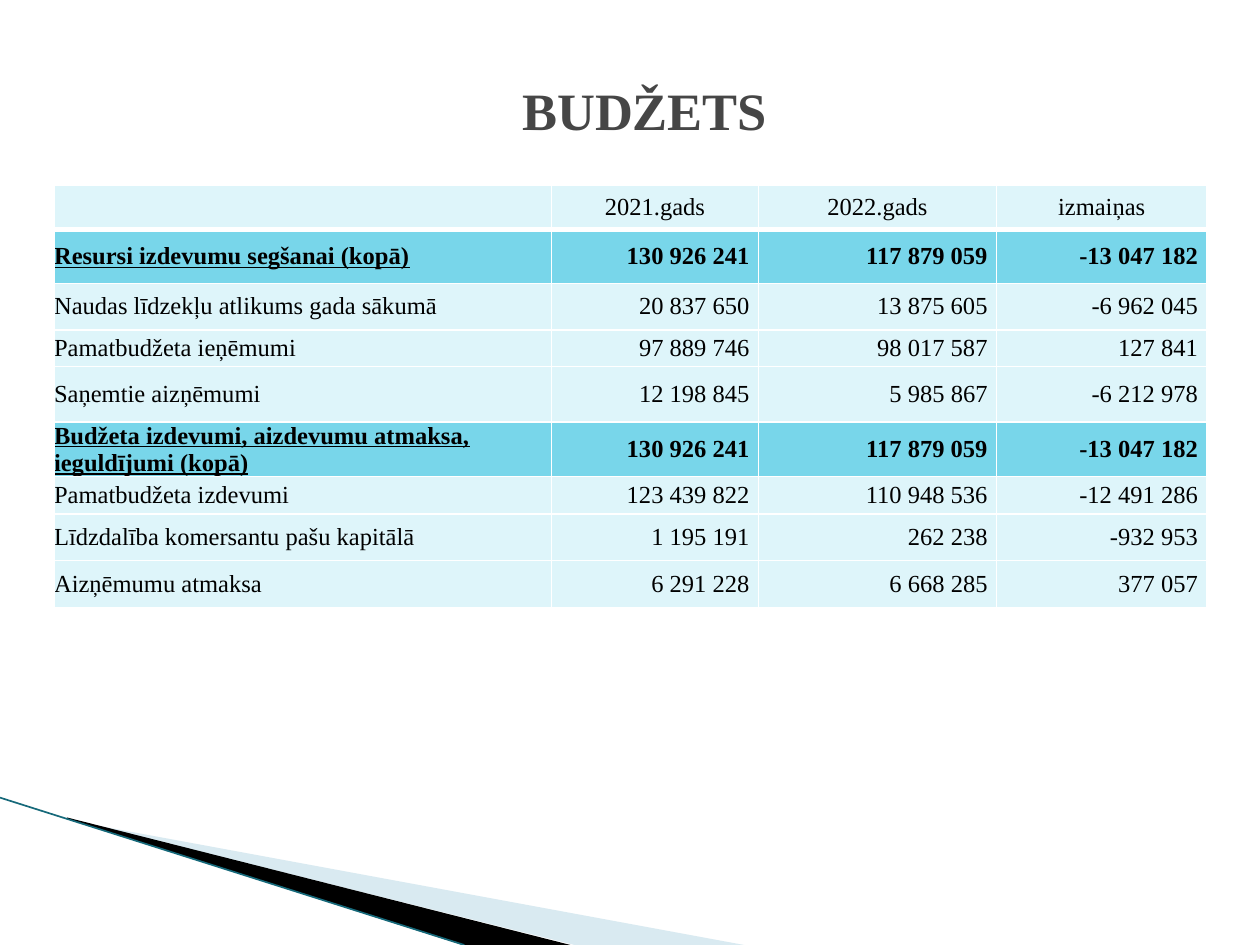
from dataclasses import dataclass
from typing import Any

from lxml.etree import SubElement as Sub
from pptx import Presentation
from pptx.dml.color import RGBColor as RGB
from pptx.enum.shapes import MSO_CONNECTOR as Link
from pptx.enum.text import MSO_ANCHOR as Anchor, PP_ALIGN as Align
from pptx.oxml.ns import qn
from pptx.util import Cm, Pt

FONT = "Times New Roman"
WHITE = RGB(0xFF, 0xFF, 0xFF)
BLACK = RGB(0, 0, 0)
GRAY = RGB(0x46, 0x46, 0x46)
PALE = RGB(0xDE, 0xF5, 0xFA)
AQUA = RGB(0x78, 0xD6, 0xEA)
MIST = RGB(0xA0, 0xCB, 0xDC)
TEAL = RGB(0x16, 0x69, 0x7A)

HEADS = ("", "2021.gads", "2022.gads", "izmaiņas")
COLS = (10.03, 4.17, 4.8, 4.24)
TOP = 0.89


@dataclass
class Row:
    name: str
    nums: tuple[str, str, str]
    high: float
    total: bool = False


@dataclass
class Wedge:
    points: list[tuple[float, float]]
    color: RGB
    alpha: int = 100


ROWS = [
    Row("Resursi izdevumu segšanai (kopā)",
        ("130 926 241", "117 879 059", "-13 047 182"), 1.09, True),
    Row("Naudas līdzekļu atlikums gada sākumā",
        ("20 837 650", "13 875 605", "-6 962 045"), 0.94),
    Row("Pamatbudžeta ieņēmumi",
        ("97 889 746", "98 017 587", "127 841"), 0.74),
    Row("Saņemtie aizņēmumi",
        ("12 198 845", "5 985 867", "-6 212 978"), 1.12),
    Row("Budžeta izdevumi, aizdevumu atmaksa, ieguldījumi (kopā)",
        ("130 926 241", "117 879 059", "-13 047 182"), 1.09, True),
    Row("Pamatbudžeta izdevumi",
        ("123 439 822", "110 948 536", "-12 491 286"), 0.76),
    Row("Līdzdalība komersantu pašu kapitālā",
        ("1 195 191", "262 238", "-932 953"), 0.94),
    Row("Aizņēmumu atmaksa",
        ("6 291 228", "6 668 285", "377 057"), 0.94),
]

WEDGES = [
    Wedge([(1.4, 16.54), (15.0, 19.05), (11.58, 19.05), (1.4, 16.51)], MIST, 40),
    Wedge([(1.35, 16.48), (11.5, 19.05), (9.33, 19.05), (1.37, 16.51)], BLACK),
]


def draw_wedge(slide: Any, wedge: Wedge) -> None:
    first, *rest = [(Cm(x), Cm(y)) for x, y in wedge.points]
    pen = slide.shapes.build_freeform(*first)
    pen.add_line_segments(rest)
    shape = pen.convert_to_shape()
    shape.shadow.inherit = False
    shape.line.fill.background()
    shape.fill.solid()
    shape.fill.fore_color.rgb = wedge.color
    if wedge.alpha < 100:
        tint = shape.fill._xPr.find(".//" + qn("a:srgbClr"))
        Sub(tint, qn("a:alpha"), val=str(wedge.alpha * 1000))


def draw_edge(slide: Any) -> None:
    edge = slide.shapes.add_connector(
        Link.STRAIGHT, Cm(0), Cm(16.08), Cm(9.36), Cm(19.05))
    edge.line.color.rgb = TEAL
    edge.line.width = Pt(0.95)
    Sub(edge._element.spPr, qn("a:effectLst"))


def set_text(para: Any, text: str, size: int, color: RGB, align: Align,
             bold: bool = False, under: bool = False) -> None:
    para.text = text
    para.alignment = align
    font = para.font
    font.name, font.size = FONT, Pt(size)
    font.bold, font.underline = bold, under
    font.color.rgb = color


def set_edges(cell: Any, top: int, base: int) -> None:
    props = cell._tc.get_or_add_tcPr()
    for side, width in zip("LRTB", (1, 1, top, base)):
        line = Sub(props, qn(f"a:ln{side}"), w=str(Pt(width)))
        Sub(Sub(line, qn("a:solidFill")), qn("a:srgbClr"), val=str(WHITE))


def fill_cell(cell: Any, text: str, align: Align, color: RGB, pad: float = 0,
              top: int = 1, base: int = 1, bold: bool = False,
              under: bool = False) -> None:
    set_edges(cell, top, base)
    cell.fill.solid()
    cell.fill.fore_color.rgb = color
    cell.vertical_anchor = Anchor.MIDDLE
    cell.margin_left = cell.margin_right = Cm(pad)
    cell.margin_top = cell.margin_bottom = Cm(0)
    set_text(cell.text_frame.paragraphs[0], text, 14, BLACK, align, bold, under)


def draw_table(slide: Any) -> None:
    highs = [TOP] + [row.high for row in ROWS]
    table = slide.shapes.add_table(
        len(highs), len(COLS), Cm(1.09), Cm(3.73),
        Cm(sum(COLS)), Cm(sum(highs))).table
    table.first_row = table.horz_banding = False
    for col, wide in zip(table.columns, COLS):
        col.width = Cm(wide)
    for line, high in zip(table.rows, highs):
        line.height = Cm(high)
    for c, head in enumerate(HEADS):
        fill_cell(table.cell(0, c), head, Align.CENTER, PALE, base=3)
    for r, row in enumerate(ROWS, 1):
        color = AQUA if row.total else PALE
        top = 3 if r == 1 else 1
        fill_cell(table.cell(r, 0), row.name, Align.LEFT, color, top=top,
                  bold=row.total, under=row.total)
        for c, num in enumerate(row.nums, 1):
            fill_cell(table.cell(r, c), num, Align.RIGHT, color, 0.18, top,
                      bold=row.total)


def draw_title(slide: Any) -> None:
    frame = slide.shapes.add_textbox(
        Cm(1.7), Cm(1.12), Cm(22.86), Cm(2.16)).text_frame
    frame.word_wrap = True
    frame.vertical_anchor = Anchor.MIDDLE
    set_text(frame.paragraphs[0], "BUDŽETS ", 30, GRAY, Align.CENTER, True)


def main() -> None:
    deck = Presentation()
    deck.slide_width, deck.slide_height = Cm(25.4), Cm(19.05)
    slide = deck.slides.add_slide(deck.slide_layouts[6])
    for wedge in WEDGES:
        draw_wedge(slide, wedge)
    draw_edge(slide)
    draw_table(slide)
    draw_title(slide)
    deck.save("out.pptx")


if __name__ == "__main__":
    main()
